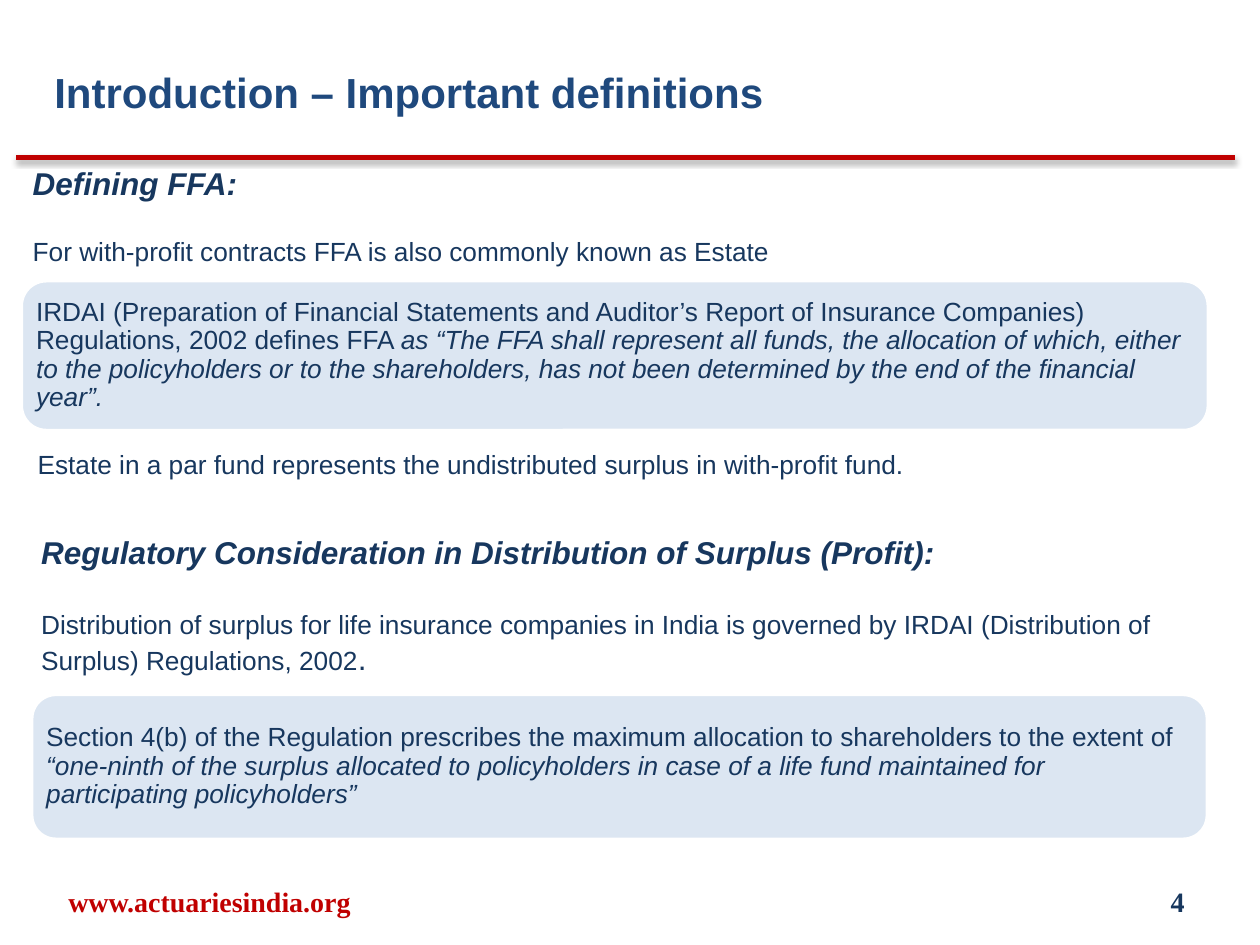
from lxml.etree import SubElement
from pptx import Presentation
from pptx.dml.color import RGBColor as RGB
from pptx.enum.shapes import MSO_CONNECTOR as LINE, MSO_SHAPE as SHAPE
from pptx.enum.text import MSO_ANCHOR as ANCHOR, PP_ALIGN as ALIGN
from pptx.oxml.ns import qn
from pptx.util import Cm, Pt


class Theme:
    navy = RGB(0x17, 0x37, 0x5E)
    blue = RGB(0x1F, 0x49, 0x7D)
    red = RGB(0xC0, 0x00, 0x00)
    pale = RGB(0xDC, 0xE6, 0xF2)
    white = RGB(0xFF, 0xFF, 0xFF)
    title = dict(name="Arial", size=Pt(24), bold=True, color=blue)
    head = dict(name="Arial", size=Pt(18), bold=True, italic=True, color=navy)
    body = dict(name="Arial", size=Pt(15), bold=False, italic=False, color=navy)
    quote = dict(body, italic=True)
    stop = dict(body, size=Pt(18))
    site = dict(name="Times New Roman", size=Pt(16), bold=True, color=red)
    page = dict(site, color=navy)


def write(para, runs, **layout):
    """Set paragraph attributes and add (text, format) runs."""
    for key, value in layout.items():
        setattr(para, key, value)
    for text, form in runs:
        run = para.add_run()
        run.text = text
        for key, value in form.items():
            if key == "color":
                run.font.color.rgb = value
            else:
                setattr(run.font, key, value)


def add_text(left, top, width, height, paras, anchor=ANCHOR.TOP):
    """Add a wrapped text box from (runs, layout) pairs."""
    box = slide.shapes.add_textbox(Cm(left), Cm(top), Cm(width), Cm(height))
    frame = box.text_frame
    frame.word_wrap = True
    frame.vertical_anchor = anchor
    for i, (runs, layout) in enumerate(paras):
        para = frame.add_paragraph() if i else frame.paragraphs[0]
        write(para, runs, **layout)


deck = Presentation()
deck.slide_width, deck.slide_height = Cm(25.4), Cm(19.05)
slide = deck.slides.add_slide(deck.slide_layouts[5])

# Title
title = slide.shapes.title
title.left, title.top, title.width, title.height = Cm(0.84), Cm(0.84), Cm(20.96), Cm(1.7)
frame = title.text_frame
frame.vertical_anchor = ANCHOR.TOP
frame.margin_top = Cm(0.5)
write(frame.paragraphs[0], [("Introduction – Important definitions", Theme.title)],
      alignment=ALIGN.LEFT)

# Red rule with a soft shadow below it
rule = slide.shapes.add_connector(LINE.STRAIGHT, Cm(0.33), Cm(3.18), Cm(24.89), Cm(3.18))
rule.line.color.rgb = Theme.red
rule.line.width = Pt(3)
effects = SubElement(rule.line._get_or_add_ln().getparent(), qn("a:effectLst"))
shadow = SubElement(effects, qn("a:outerShdw"), blurRad="40000", dist="20000",
                    dir="5400000", rotWithShape="0")
shade = SubElement(shadow, qn("a:srgbClr"), val="000000")
SubElement(shade, qn("a:alpha"), val="38000")

# Plain text blocks
add_text(0.41, 3.18, 24.56, 3.07, [
    ([("Defining FFA:", Theme.head)], {}),
    ([("For with-profit contracts FFA is also commonly known as Estate", Theme.body)],
     dict(space_before=Pt(19))),
])
add_text(0.51, 8.92, 23.93, 0.89, [
    ([("Estate in a par fund represents the undistributed surplus in with-profit fund.",
       Theme.body)], {}),
])
add_text(0.58, 10.62, 23.7, 3.99, [
    ([("Regulatory Consideration in Distribution of Surplus (Profit):", Theme.head)], {}),
    ([("Distribution of surplus for life insurance companies in India is governed by "
       "IRDAI (Distribution of Surplus) Regulations, 2002", Theme.body),
      (".", Theme.stop)],
     dict(space_before=Pt(18.5), line_spacing=Pt(21))),
])

# Quoted regulations in rounded panels
panels = [
    (0.43, 5.66, 23.93, 3.02,
     "IRDAI (Preparation of Financial Statements and Auditor’s Report of Insurance "
     "Companies) Regulations, 2002 defines FFA ",
     "as “The FFA shall represent all funds, the allocation of which, either to the "
     "policyholders or to the shareholders, has not been determined by the end of the "
     "financial year”."),
    (0.64, 14, 23.7, 2.92,
     "Section 4(b) of the Regulation prescribes the maximum allocation to shareholders "
     "to the extent of ",
     "“one-ninth of the surplus allocated to policyholders in case of a life fund "
     "maintained for participating policyholders”"),
]
for left, top, width, height, lead, quote in panels:
    panel = slide.shapes.add_shape(SHAPE.ROUNDED_RECTANGLE, Cm(left), Cm(top),
                                   Cm(width), Cm(height))
    panel.shadow.inherit = False
    panel.fill.solid()
    panel.fill.fore_color.rgb = Theme.pale
    panel.line.color.rgb = Theme.white
    panel.line.width = Pt(2)
    frame = panel.text_frame
    frame.word_wrap = True
    frame.vertical_anchor = ANCHOR.MIDDLE
    for side in ("left", "top", "right", "bottom"):
        setattr(frame, f"margin_{side}", Cm(0.15))
    write(frame.paragraphs[0], [(lead, Theme.body), (quote, Theme.quote)],
          alignment=ALIGN.LEFT, line_spacing=0.9)

# Footer
for left, width, text, form, align in [
    (0.2, 8.05, "www.actuariesindia.org", Theme.site, ALIGN.CENTER),
    (18.21, 5.92, "4", Theme.page, ALIGN.RIGHT),
]:
    add_text(left, 17.65, width, 1.02, [([(text, form)], dict(alignment=align))],
             ANCHOR.MIDDLE)

deck.save("out.pptx")
